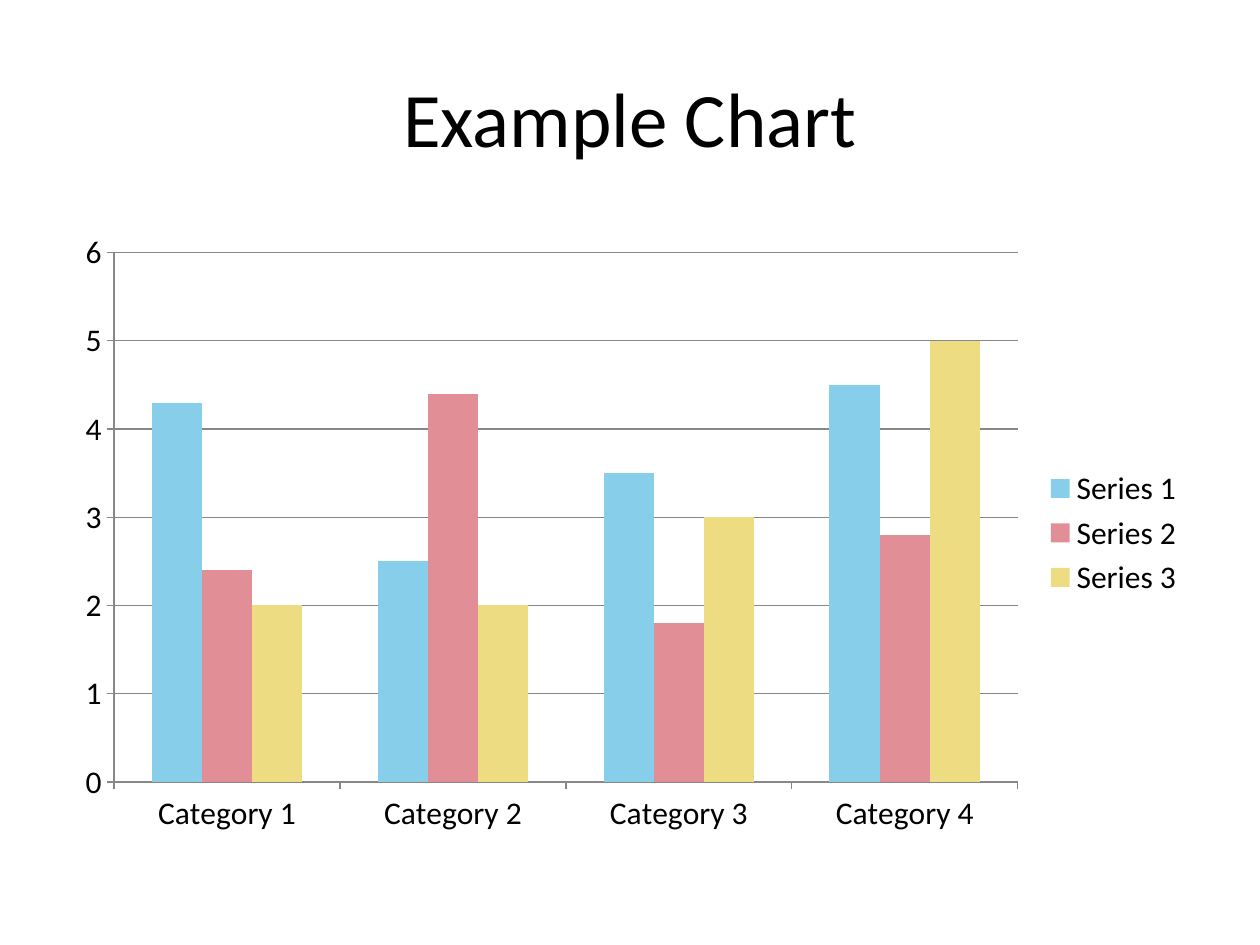
import pptx
import pptx.chart.data
import pptx.dml.color
import pptx.enum.chart
import pptx.enum.text
import pptx.util

PX = 914400 // 126
FONT = "Calibri"
COLORS = {
    "text": "000000",
    "line": "878787",
    "Series 1": "87CEEB",
    "Series 2": "E18E96",
    "Series 3": "EEDC82",
}
CATEGORIES = ["Category 1", "Category 2", "Category 3", "Category 4"]
SERIES = {
    "Series 1": (4.3, 2.5, 3.5, 4.5),
    "Series 2": (2.4, 4.4, 1.8, 2.8),
    "Series 3": (2, 2, 3, 5),
}


def px(*lengths):
    return [pptx.util.Emu(n * PX) for n in lengths]


def rgb(name):
    return pptx.dml.color.RGBColor.from_string(COLORS[name])


def set_font(font, size):
    font.name = FONT
    font.size = pptx.util.Pt(size)
    font.color.rgb = rgb("text")


def style_line(line):
    line.color.rgb = rgb("line")
    line.width = pptx.util.Pt(0.75)


def add_title(slide, text, box):
    tf = slide.shapes.add_textbox(*px(*box)).text_frame
    tf.word_wrap = True
    tf.vertical_anchor = pptx.enum.text.MSO_ANCHOR.MIDDLE
    p = tf.paragraphs[0]
    p.text = text
    p.alignment = pptx.enum.text.PP_ALIGN.CENTER
    set_font(p.font, 44)


def add_column_chart(slide, box):
    data = pptx.chart.data.CategoryChartData()
    data.categories = CATEGORIES
    for name, values in SERIES.items():
        data.add_series(name, values)
    kind = pptx.enum.chart.XL_CHART_TYPE.COLUMN_CLUSTERED
    chart = slide.shapes.add_chart(kind, *px(*box), data).chart
    set_font(chart.font, 18)
    chart.has_title = False

    chart.has_legend = True
    chart.legend.position = pptx.enum.chart.XL_LEGEND_POSITION.RIGHT
    chart.legend.include_in_layout = False

    for axis in (chart.category_axis, chart.value_axis):
        axis.major_tick_mark = pptx.enum.chart.XL_TICK_MARK.OUTSIDE
        axis.minor_tick_mark = pptx.enum.chart.XL_TICK_MARK.NONE
        style_line(axis.format.line)
    chart.value_axis.minimum_scale = 0
    chart.value_axis.maximum_scale = 6
    chart.value_axis.major_unit = 1
    chart.value_axis.has_major_gridlines = True
    style_line(chart.value_axis.major_gridlines.format.line)

    plot = chart.plots[0]
    plot.vary_by_categories = False
    plot.gap_width = 150
    for series in plot.series:
        series.format.fill.solid()
        series.format.fill.fore_color.rgb = rgb(series.name)


def main():
    prs = pptx.Presentation()
    prs.slide_width, prs.slide_height = px(1260, 945)
    slide = prs.slides.add_slide(prs.slide_layouts[6])
    add_title(slide, "Example Chart", (63, 38, 1134, 158))
    add_column_chart(slide, (63, 221, 1134, 624))
    prs.save("out.pptx")


if __name__ == "__main__":
    main()
